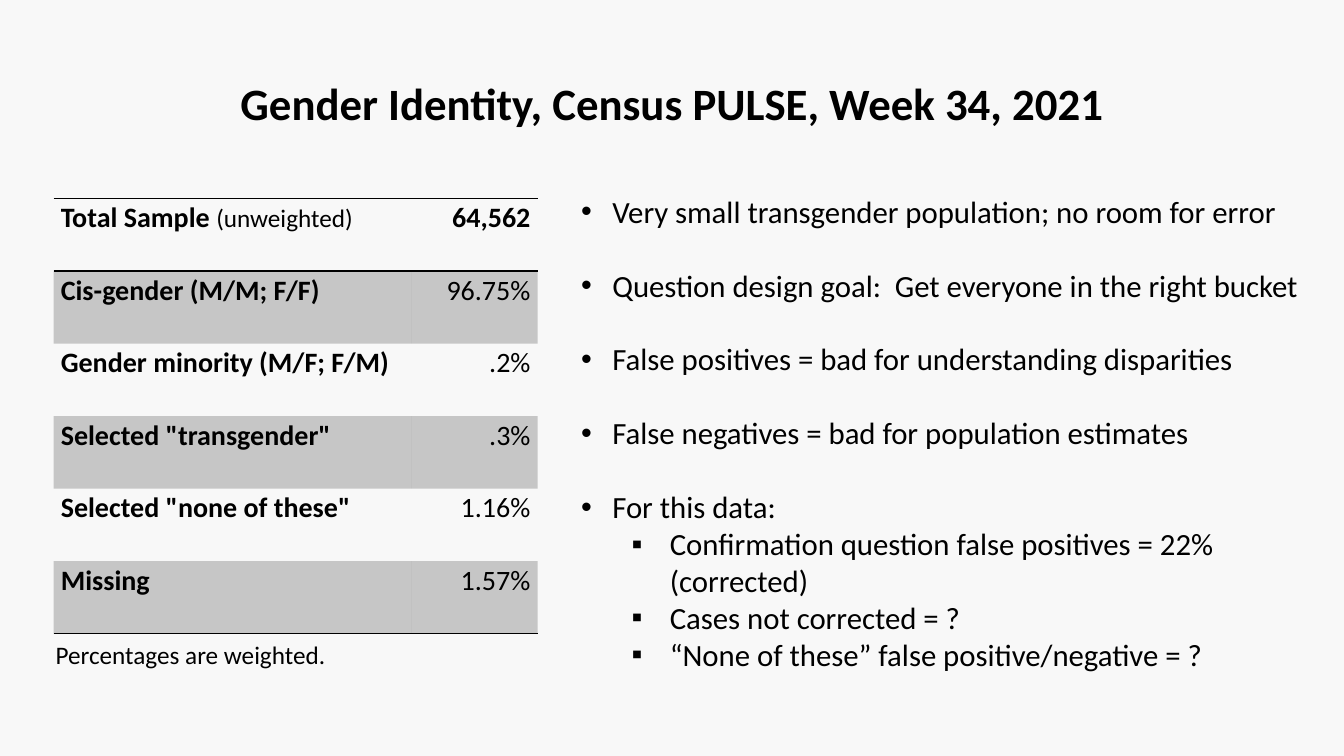
from dataclasses import dataclass

from lxml.etree import SubElement
from pptx import Presentation
from pptx.dml.color import RGBColor
from pptx.enum.text import MSO_ANCHOR as Anchor, PP_ALIGN as Align
from pptx.oxml.ns import qn
from pptx.util import Emu, Inches, Pt

SLIDE_WIDTH, SLIDE_HEIGHT = Inches(13.33), Inches(7.5)
GRID = 100  # columns across and rows down the slide


@dataclass(frozen=True)
class Theme:
    font: str = "Calibri"
    ink: str = "000000"
    paper: str = "F8F8F8"
    band_opacity: int = 20
    title: int = 32
    bullet: int = 22
    table: int = 20
    small: int = 18
    rule: int = 1


THEME = Theme()

SAMPLE_ROWS = [
    ("Total Sample ", "64,562"),
    ("Cis-gender (M/M; F/F)", "96.75%"),
    ("Gender minority (M/F; F/M)", ".2%"),
    ('Selected "transgender"', ".3%"),
    ('Selected "none of these"', "1.16%"),
    ("Missing", "1.57%"),
]
POINTS = [
    "Very small transgender population; no room for error",
    "Question design goal:  Get everyone in the right bucket",
    "False positives = bad for understanding disparities",
    "False negatives = bad for population estimates",
    "For this data:",
]
DATA_POINTS = [
    "Confirmation question false positives = 22% (corrected)",
    "Cases not corrected = ?",
    "“None of these” false positive/negative = ?",
]
POINT_STYLE = {"char": "•", "indent": 0.31, "hang": 0.31}
DATA_STYLE = {"char": "▪", "indent": 0.88, "hang": 0.38}


def across(columns):
    return Emu(round(SLIDE_WIDTH * columns / GRID))


def down(rows):
    return Emu(round(SLIDE_HEIGHT * rows / GRID))


def apply(target, values):
    for name, value in values.items():
        setattr(target, name, value)


def add_span(para, text, size, bold=False):
    span = para.add_run()
    span.text = text
    apply(span.font, {"name": THEME.font, "size": Pt(size), "bold": bold})
    span.font.color.rgb = RGBColor.from_string(THEME.ink)


def add_box(page, left, top, width, height, **frame_format):
    box = page.shapes.add_textbox(across(left), down(top), across(width), down(height))
    apply(box.text_frame, {"word_wrap": True, **frame_format})
    return box.text_frame


def add_bullet(para, text, char, indent, hang):
    add_span(para, text, THEME.bullet)
    properties = para._p.get_or_add_pPr()
    properties.set("marL", str(Inches(indent)))
    properties.set("indent", str(-Inches(hang)))
    SubElement(properties, qn("a:buFont"), typeface="Arial")
    SubElement(properties, qn("a:buChar"), char=char)


def rule_cell(cell, edges):
    """Draw rules on the edges named: T for top, B for bottom."""
    for edge in edges:
        line = SubElement(cell._tc.get_or_add_tcPr(), qn(f"a:ln{edge}"), w=str(Pt(THEME.rule)))
        fill = SubElement(line, qn("a:solidFill"))
        SubElement(fill, qn("a:srgbClr"), val=THEME.ink)


def shade_cell(cell):
    cell.fill.solid()
    cell.fill.fore_color.rgb = RGBColor.from_string(THEME.ink)
    color = cell._tc.tcPr.find(f"{qn('a:solidFill')}/{qn('a:srgbClr')}")
    SubElement(color, qn("a:alpha"), val=str(THEME.band_opacity * 1000))


def add_title(page):
    frame = add_box(page, 6.9, 8.4, 86.25, 10.4, vertical_anchor=Anchor.MIDDLE)
    para = frame.paragraphs[0]
    para.alignment = Align.CENTER
    add_span(para, "Gender Identity, Census PULSE, Week 34, 2021", THEME.title, bold=True)


def add_sample_table(page):
    last = len(SAMPLE_ROWS) - 1
    table = page.shapes.add_table(
        len(SAMPLE_ROWS), 2, across(4), down(26.25), across(36), down(57.6)).table
    apply(table, {"first_row": False, "horz_banding": False})
    style = table._tbl.tblPr.find(qn("a:tableStyleId"))
    style.text = "{2D5ABB26-0587-4C30-8999-92F81FD0307C}"  # no style, no grid
    for column, width in zip(table.columns, (26.6, 9.4)):
        column.width = across(width)

    for row, texts in enumerate(SAMPLE_ROWS):
        edges = {0: "TB", last: "B"}.get(row, "")
        for column, text in enumerate(texts):
            cell = table.cell(row, column)
            apply(cell, {"margin_left": Inches(0.07), "margin_right": Inches(0.07),
                         "margin_top": 0, "margin_bottom": 0})
            para = cell.text_frame.paragraphs[0]
            apply(para, {"alignment": (Align.LEFT, Align.RIGHT)[column], "line_spacing": 1.07})
            add_span(para, text, THEME.table, bold=row == 0 or column == 0)
            rule_cell(cell, edges)
            if row % 2:
                shade_cell(cell)
            else:
                cell.fill.background()
    add_span(table.cell(0, 0).text_frame.paragraphs[0], "(unweighted)", THEME.small)


def add_points(page):
    frame = add_box(page, 42.5, 24.8, 57.5, 65.5)
    bullets = [(text, POINT_STYLE) for text in POINTS]
    bullets += [(text, DATA_STYLE) for text in DATA_POINTS]
    for number, (text, style) in enumerate(bullets):
        para = frame.add_paragraph() if number else frame.paragraphs[0]
        para.level = int(style is DATA_STYLE)
        if number < len(POINTS) - 1:
            para.space_after = Pt(26.4)
        add_bullet(para, text, **style)


def add_note(page):
    frame = add_box(page, 3.4, 83.9, 34, 5.3)
    add_span(frame.paragraphs[0], "Percentages are weighted.", THEME.small)


def main():
    deck = Presentation()
    apply(deck, {"slide_width": SLIDE_WIDTH, "slide_height": SLIDE_HEIGHT})
    page = deck.slides.add_slide(deck.slide_layouts[6])
    page.background.fill.solid()
    page.background.fill.fore_color.rgb = RGBColor.from_string(THEME.paper)
    add_title(page)
    add_sample_table(page)
    add_points(page)
    add_note(page)
    deck.save("out.pptx")


if __name__ == "__main__":
    main()
